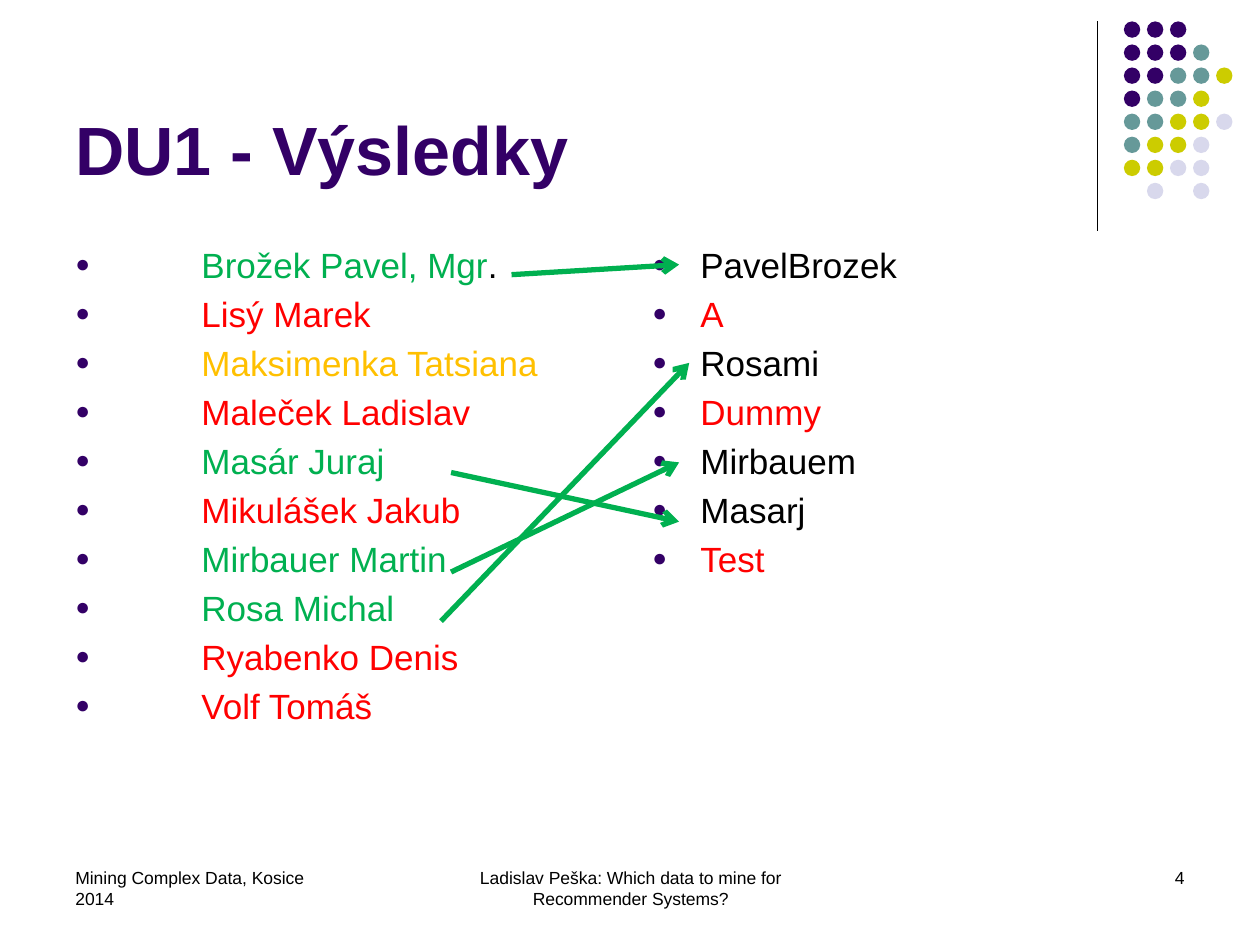
from lxml.etree import SubElement
from pptx import Presentation
from pptx.dml.color import RGBColor
from pptx.enum.shapes import MSO_CONNECTOR as Connector, MSO_SHAPE as Shape
from pptx.enum.text import MSO_ANCHOR as Anchor, PP_ALIGN as Align
from pptx.oxml.ns import qn
from pptx.util import Inches, Pt

THEME = {
    "font": "Arial", "title": 39, "body": 20, "footer": 10,
    "purple": "330066", "teal": "669999", "olive": "CCCC00", "pale": "D8D8EC",
    "black": "000000", "green": "00B050", "red": "FF0000", "amber": "FFC000",
}

# Content: each list entry is a sequence of (text, colour) spans
TITLE = "DU1 - Výsledky"
STUDENTS = [
    [("Brožek Pavel, Mgr", "green"), (".", "black")],
    [("Lisý Marek", "red")],
    [("Maksimenka Tatsiana", "amber")],
    [("Maleček Ladislav", "red")],
    [("Masár Juraj", "green")],
    [("Mikulášek Jakub", "red")],
    [("Mirbauer Martin", "green")],
    [("Rosa Michal", "green")],
    [("Ryabenko Denis", "red")],
    [("Volf Tomáš", "red")],
]
ACCOUNTS = [
    [("PavelBrozek", "black")],
    [("A", "red")],
    [("Rosami", "black")],
    [("Dummy", "red")],
    [("Mirbauem", "black")],
    [("Masarj", "black")],
    [("Test", "red")],
]
LISTS = [(0.5, 1.0, STUDENTS), (5.08, 0.38, ACCOUNTS)]  # left, indent, entries
FOOTERS = [  # left, width, alignment, text
    (0.5, 2.33, Align.LEFT, "Mining Complex Data, Kosice 2014"),
    (3.42, 3.17, Align.CENTER,
     "Ladislav Peška: Which data to mine for Recommender Systems?"),
    (7.17, 2.33, Align.RIGHT, "4"),
]
MATCHES = [  # student end, account end
    ((4.06, 2.18), (5.39, 2.1)),
    ((3.5, 4.93), (5.47, 2.88)),
    ((3.58, 4.54), (5.39, 3.67)),
    ((3.58, 3.75), (5.39, 4.14)),
]
DOT_ROWS = ["PPP", "PPPT", "PPTTO", "PTTO", "TTOOL", "TOOL", "OOLL", " L L"]
DOT_COLOURS = {"P": "purple", "T": "teal", "O": "olive", "L": "pale"}
DOT_LEFT, DOT_TOP, DOT_SIZE, DOT_PITCH = 8.92, 0.17, 0.13, 0.183


def colour(name):
    return RGBColor.from_string(THEME[name])


def add_box(page, left, top, width, height, anchor=Anchor.TOP):
    box = page.shapes.add_textbox(*map(Inches, (left, top, width, height)))
    frame = box.text_frame
    frame.word_wrap = True
    frame.vertical_anchor = anchor
    return frame


def style(para, size, name="black", bold=False):
    para.font.name = THEME["font"]
    para.font.size = Pt(THEME[size])
    para.font.bold = bold
    para.font.color.rgb = colour(name)


def add_bullet(para, indent):
    props = para._p.get_or_add_pPr()
    props.set("marL", str(Inches(indent)))
    props.set("indent", str(-Inches(indent)))
    spacing = SubElement(props, qn("a:spcBef"))
    SubElement(spacing, qn("a:spcPct"), val="20000")
    bullet_colour = SubElement(props, qn("a:buClr"))
    SubElement(bullet_colour, qn("a:srgbClr"), val=THEME["purple"])
    SubElement(props, qn("a:buSzPct"), val="70000")
    SubElement(props, qn("a:buFont"), typeface=THEME["font"])
    SubElement(props, qn("a:buChar"), char="●")


def add_line(page, start, end, name, width, arrow=False):
    line = page.shapes.add_connector(
        Connector.STRAIGHT, *map(Inches, (*start, *end)))
    line.line.color.rgb = colour(name)
    line.line.width = Pt(width)
    if arrow:
        SubElement(line.line._get_or_add_ln(), qn("a:tailEnd"), type="arrow")
    SubElement(line._element.spPr, qn("a:effectLst"))


deck = Presentation()
deck.slide_width, deck.slide_height = Inches(10), Inches(7.5)
page = deck.slides.add_slide(deck.slide_layouts[6])

# Corner decoration: rule and dot grid
add_line(page, (8.71, 0.17), (8.71, 1.83), "black", 0.75)
for row, codes in enumerate(DOT_ROWS):
    for column, code in enumerate(codes):
        if code == " ":
            continue
        dot = page.shapes.add_shape(
            Shape.OVAL,
            Inches(DOT_LEFT + column * DOT_PITCH),
            Inches(DOT_TOP + row * DOT_PITCH),
            Inches(DOT_SIZE), Inches(DOT_SIZE))
        dot.shadow.inherit = False
        dot.fill.solid()
        dot.fill.fore_color.rgb = colour(DOT_COLOURS[code])
        dot.line.fill.background()

# Title
title = add_box(page, 0.5, 0.13, 8.25, 1.42, Anchor.BOTTOM).paragraphs[0]
title.text = TITLE
style(title, "title", "purple", bold=True)

# Two bulleted lists
for left, indent, entries in LISTS:
    frame = add_box(page, left, 1.88, 4.42, 4.82)
    for index, spans in enumerate(entries):
        para = frame.add_paragraph() if index else frame.paragraphs[0]
        add_bullet(para, indent)
        style(para, "body")
        for text, name in spans:
            span = para.add_run()
            span.text = text
            span.font.color.rgb = colour(name)

# Footer
for left, width, align, text in FOOTERS:
    para = add_box(page, left, 6.83, width, 0.5).paragraphs[0]
    para.text = text
    para.alignment = align
    style(para, "footer")

# Arrows from students to their accounts
for start, end in MATCHES:
    add_line(page, start, end, "green", 3, arrow=True)

deck.save("out.pptx")
